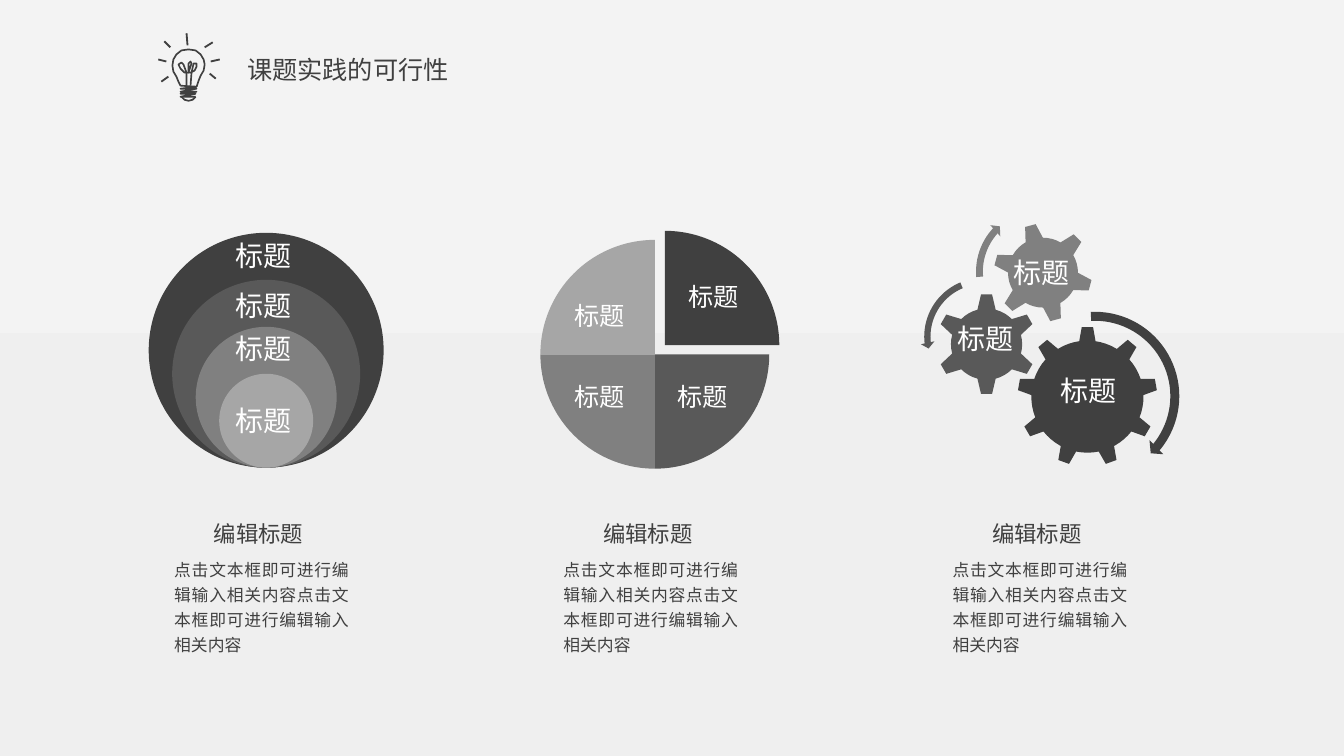
import lxml.etree
import pptx
import pptx.dml.color
import pptx.enum.shapes
import pptx.enum.text
import pptx.oxml.ns
import pptx.util

Inches = pptx.util.Inches
SHAPE = pptx.enum.shapes.MSO_SHAPE
ALIGN = pptx.enum.text.PP_ALIGN
FONT = "Noto Sans CJK JP"
GREYS = ["404040", "595959", "808080", "A6A6A6"]

deck = pptx.Presentation()
deck.slide_width, deck.slide_height = Inches(13.33), Inches(7.5)
slide = deck.slides.add_slide(deck.slide_layouts[6])


def paint(target, hex_color):
    if hasattr(target, "solid"):
        target.solid()
        target = target.fore_color
    target.rgb = pptx.dml.color.RGBColor.from_string(hex_color)


def write(text, left, top, width, height, size=20, color="FFFFFF", align=ALIGN.CENTER, spacing=None):
    box = slide.shapes.add_textbox(Inches(left), Inches(top), Inches(width), Inches(height))
    frame = box.text_frame
    frame.word_wrap = True
    frame.auto_size = pptx.enum.text.MSO_AUTO_SIZE.SHAPE_TO_FIT_TEXT
    paragraph = frame.paragraphs[0]
    paragraph.alignment = align
    paragraph.line_spacing = spacing
    run = paragraph.add_run()
    run.text = text
    run.font.size = pptx.util.Pt(size)
    paint(run.font.color, color)
    run.font.name = FONT
    east_asian = pptx.oxml.ns.qn("a:ea")
    lxml.etree.SubElement(run._r.get_or_add_rPr(), east_asian, typeface=FONT)


backdrop = slide.background.fill
backdrop.gradient()
backdrop.gradient_angle = 90
for stop, (position, color) in zip(backdrop.gradient_stops, [(0.12, "EFEFEF"), (1, "F3F3F3")]):
    stop.position = position
    paint(stop.color, color)

bulb_strokes = [
    [(1.79, 0.85), (1.77, 0.81), (1.75, 0.76), (1.72, 0.71), (1.71, 0.65), (1.72, 0.59),
     (1.75, 0.54), (1.8, 0.5), (1.87, 0.49), (1.94, 0.5), (1.99, 0.54), (2.02, 0.59),
     (2.03, 0.64), (2.02, 0.7), (1.99, 0.75), (1.97, 0.8), (1.95, 0.86)],
    [(1.85, 0.85), (1.85, 0.72), (1.82, 0.64), (1.8, 0.62), (1.77, 0.64), (1.79, 0.68),
     (1.83, 0.72), (1.89, 0.72), (1.93, 0.7), (1.95, 0.66), (1.95, 0.63), (1.92, 0.63),
     (1.9, 0.72), (1.89, 0.85)],
    [(1.87, 0.72), (1.87, 0.63), (1.89, 0.61), (1.9, 0.63), (1.87, 0.72)],
    [(1.79, 0.85), (1.95, 0.86), (1.79, 0.88), (1.95, 0.88), (1.79, 0.91), (1.95, 0.91),
     (1.79, 0.93), (1.94, 0.93), (1.79, 0.96), (1.94, 0.96)],
    [(1.8, 0.96), (1.83, 0.99), (1.87, 1), (1.91, 0.99), (1.94, 0.96)],
]
strokes = [[(Inches(x), Inches(y)) for x, y in stroke] for stroke in bulb_strokes]
outline = slide.shapes.build_freeform(*strokes[0][0], scale=1.0)
outline.add_line_segments(strokes[0][1:], close=False)
for stroke in strokes[1:]:
    outline.move_to(*stroke[0])
    outline.add_line_segments(stroke[1:], close=False)
bulb = outline.convert_to_shape()
bulb.shadow.inherit = False
bulb.fill.background()
paint(bulb.line.fill, GREYS[0])
bulb.line.width = pptx.util.Pt(1.2)

rays = [
    (1.85, 0.33, 1.86, 0.45), (2.11, 0.42, 2.03, 0.47), (2.18, 0.59, 2.09, 0.61),
    (2.08, 0.73, 2.14, 0.78), (1.63, 0.41, 1.69, 0.47), (1.57, 0.59, 1.65, 0.61),
    (1.6, 0.81, 1.67, 0.76),
]
for ends in rays:
    ray = slide.shapes.add_connector(pptx.enum.shapes.MSO_CONNECTOR.STRAIGHT, *map(Inches, ends))
    paint(ray.line.fill, GREYS[0])
    ray.line.width = pptx.util.Pt(1.3)
    lxml.etree.SubElement(ray._element.spPr, pptx.oxml.ns.qn("a:effectLst"))

write("课题实践的可行性", 0.74, 0.49, 5.42, 0.4, size=18, color=GREYS[0])

diagram_parts = []
for ring, grey in enumerate(GREYS):
    diameter = 2.33 * (1 - 0.2 * ring)
    diagram_parts.append((SHAPE.OVAL, 2.64 - diameter / 2, 4.64 - diameter, diameter, grey, [], 0))
for quarter, grey in enumerate(GREYS):
    left, top = (5.46, 2.29) if quarter == 0 else (5.36, 2.38)
    start = 54 * ((quarter + 3) % 4)
    angles = [start, (start + 54) % 216]
    diagram_parts.append((SHAPE.PIE, left, top, 2.27, grey, angles, 0))
diagram_parts += [
    (SHAPE.GEAR_9, 10.09, 3.24, 1.39, GREYS[0], [], 0),
    (SHAPE.GEAR_6, 9.28, 2.91, 1.01, GREYS[1], [], 0),
    (SHAPE.GEAR_6, 9.85, 2.21, 0.99, GREYS[2], [], 345),
    (SHAPE.CIRCULAR_ARROW, 9.97, 3.04, 1.78, GREYS[0], [0.05, 3.6, 23.83, 160.28, 0.055], 0),
    (SHAPE.LEFT_CIRCULAR_ARROW, 9.13, 2.72, 1.24, GREYS[1], [0.05, -3.6, 104.19, 148.38, 0.055], 0),
    (SHAPE.CIRCULAR_ARROW, 9.64, 2.02, 1.35, GREYS[2], [0.05, 3.6, 133.48, 105.08, 0.055], 0),
]
for preset, left, top, side, grey, adjustments, rotation in diagram_parts:
    part = slide.shapes.add_shape(preset, Inches(left), Inches(top), Inches(side), Inches(side))
    part.shadow.inherit = False
    paint(part.fill, grey)
    part.line.fill.background()
    part.rotation = rotation
    for index, value in enumerate(adjustments):
        part.adjustments[index] = value

ring_labels = [(1.87, top) for top in (2.32, 2.81, 3.24, 3.95)]
gear_labels = [(9.59, 2.49), (10.06, 3.66), (9.03, 3.14)]
for left, top in ring_labels + gear_labels:
    write("标题", left, top, 1.48, 0.44)
for left, top in [(6.73, 2.74), (6.62, 3.73), (5.6, 3.73), (5.6, 2.93)]:
    write("标题", left, top, 0.8, 0.4, size=18, align=ALIGN.JUSTIFY)

for column in range(3):
    left = 1.63 + 3.86 * column
    write("编辑标题", left + 0.33, 5.11, 1.21, 0.37, size=16, color=GREYS[0])
    write("点击文本框即可进行编辑输入相关内容" * 2, left, 5.45, 1.93, 1.11,
          size=12, color=GREYS[0], align=ALIGN.JUSTIFY, spacing=1.25)

deck.save("out.pptx")
